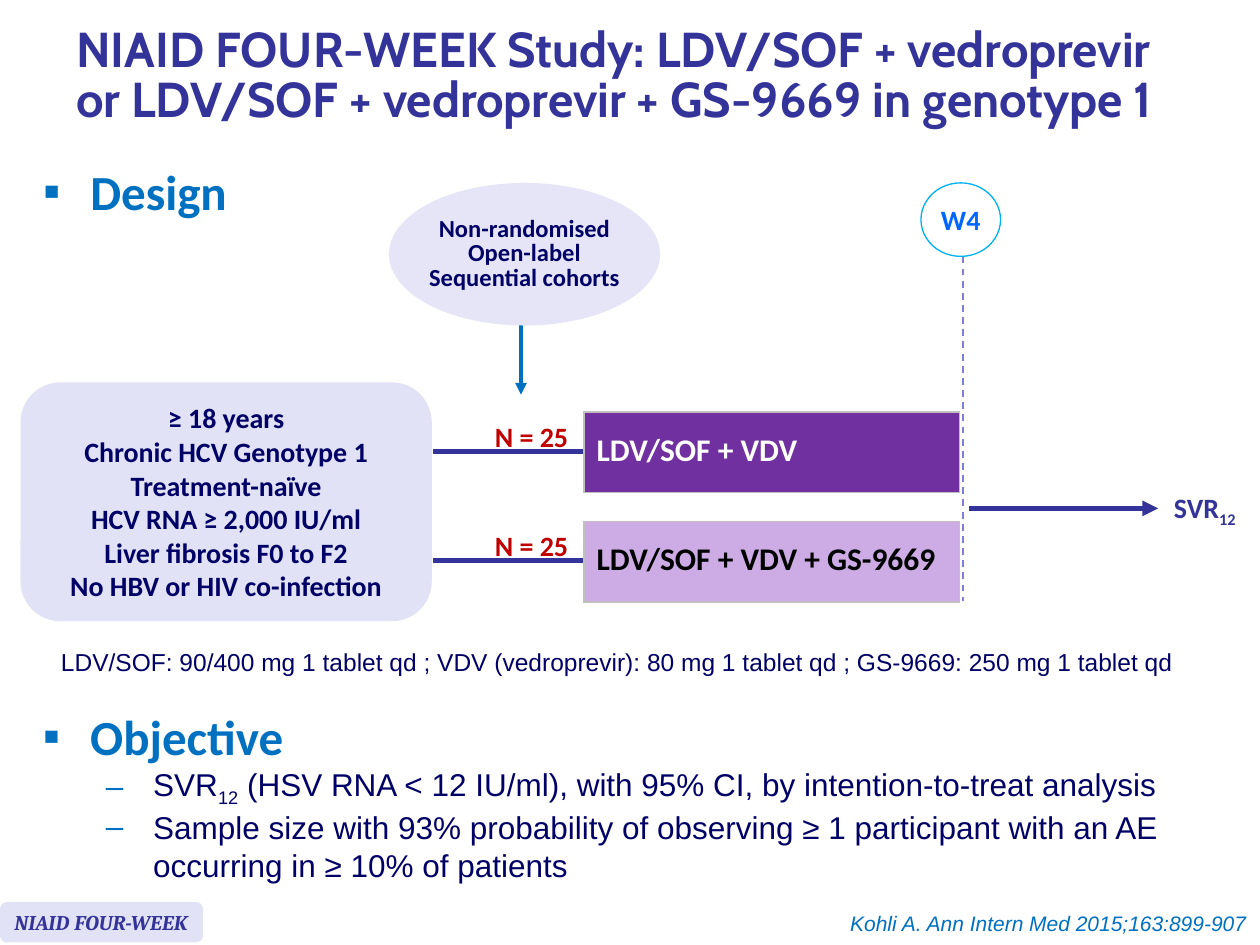
from pptx import Presentation
from pptx.dml.color import RGBColor
from pptx.enum.dml import MSO_LINE
from pptx.enum.shapes import MSO_CONNECTOR, MSO_SHAPE
from pptx.enum.text import MSO_ANCHOR, PP_ALIGN
from pptx.oxml.ns import qn
from pptx.util import Pt
from lxml import etree

LEFT, CENTER, RIGHT = PP_ALIGN.LEFT, PP_ALIGN.CENTER, PP_ALIGN.RIGHT
TOP, MIDDLE = MSO_ANCHOR.TOP, MSO_ANCHOR.MIDDLE
ELLIPSE, ROUNDED = MSO_SHAPE.OVAL, MSO_SHAPE.ROUNDED_RECTANGLE
STRAIGHT, DASH = MSO_CONNECTOR.STRAIGHT, MSO_LINE.DASH

INDIGO = RGBColor(0x33, 0x33, 0x99)
NAVY = RGBColor(0x00, 0x00, 0x66)
BLUE = RGBColor(0x00, 0x70, 0xC0)
BRIGHT_BLUE = RGBColor(0x00, 0x66, 0xFF)
CYAN = RGBColor(0x00, 0xB0, 0xF0)
RED = RGBColor(0xC0, 0x00, 0x00)
PURPLE = RGBColor(0x70, 0x30, 0xA0)
LILAC = RGBColor(0xCD, 0xAC, 0xE6)
PALE = RGBColor(0xE2, 0xE2, 0xF6)
PALE_OVAL = RGBColor(0xE5, 0xE5, 0xF7)
DASH_BLUE = RGBColor(0x7E, 0x7E, 0xD4)
GREY = RGBColor(0xC0, 0xC0, 0xC0)
WHITE = RGBColor(0xFF, 0xFF, 0xFF)
BLACK = RGBColor(0x00, 0x00, 0x00)


def add_run(p, text, size, color, font="Calibri", bold=True, italic=False, sub=False):
    r = p.add_run()
    r.text = text
    f = r.font
    f.name, f.size, f.bold, f.italic = font, Pt(size), bold, italic
    f.color.rgb = color
    if sub:
        r._r.get_or_add_rPr().set("baseline", "-25000")


def write_lines(tf, lines, size, color, align=LEFT, anchor=TOP, wrap=False,
                spacing=None, **style):
    tf.word_wrap, tf.vertical_anchor = wrap, anchor
    for i, line in enumerate(lines):
        p = tf.add_paragraph() if i else tf.paragraphs[0]
        p.alignment = align
        if spacing:
            p.line_spacing = spacing
        for j, part in enumerate(line.split("\n")):
            if j:
                p.add_line_break()
            add_run(p, part, size, color, **style)


def add_text(s, x, y, w, h, lines, size, color, **style):
    tf = s.shapes.add_textbox(Pt(x), Pt(y), Pt(w), Pt(h)).text_frame
    write_lines(tf, lines, size, color, **style)
    return tf


def add_panel(s, kind, x, y, w, h, fill, lines, size, color, outline=None, **style):
    sp = s.shapes.add_shape(kind, Pt(x), Pt(y), Pt(w), Pt(h))
    sp.shadow.inherit = False
    sp.fill.solid()
    sp.fill.fore_color.rgb = fill
    if outline:
        sp.line.color.rgb, sp.line.width = outline, Pt(0.75)
    else:
        sp.line.fill.background()
    write_lines(sp.text_frame, lines, size, color, anchor=MIDDLE, **style)


def add_line(s, x1, y1, x2, y2, color, width, arrow=False, dash=None):
    line = s.shapes.add_connector(STRAIGHT, Pt(x1), Pt(y1), Pt(x2), Pt(y2))
    line.line.color.rgb, line.line.width = color, Pt(width)
    if dash:
        line.line.dash_style = dash
    if arrow:
        etree.SubElement(line.line._get_or_add_ln(), qn("a:tailEnd"), type="triangle")
    etree.SubElement(line._element.spPr, qn("a:effectLst"))


def add_arm(s, x, y, text, fill, color):
    """One treatment arm: connecting line, patient count and treatment cell."""
    w, h = 214.5, 46
    add_line(s, x - 86.5, y + h / 2 - 0.5, x, y + h / 2 - 0.5, INDIGO, 3)
    add_text(s, x - 58.5, y + 0.5, 57, 26.5, ["N = 25"], 16, RED, align=CENTER)
    table = s.shapes.add_table(1, 1, Pt(x), Pt(y), Pt(w), Pt(h)).table
    table.first_row = table.horz_banding = False
    cell = table.cell(0, 0)
    write_lines(cell.text_frame, [text], 18, color, wrap=True, spacing=0.8)
    cell.vertical_anchor = MIDDLE
    tc_pr = cell._tc.get_or_add_tcPr()
    for side in ("lnL", "lnR", "lnT", "lnB"):
        ln = etree.SubElement(tc_pr, qn(f"a:{side}"), w=str(Pt(1)))
        solid = etree.SubElement(ln, qn("a:solidFill"))
        etree.SubElement(solid, qn("a:srgbClr"), val=str(GREY))
    cell.fill.solid()
    cell.fill.fore_color.rgb = fill


def add_bullet(p, char, indent):
    p_pr = p._p.get_or_add_pPr()
    p_pr.set("marL", str(Pt(indent)))
    p_pr.set("indent", str(Pt(-27)))
    color = etree.SubElement(p_pr, qn("a:buClr"))
    etree.SubElement(color, qn("a:srgbClr"), val=str(BLUE))
    etree.SubElement(p_pr, qn("a:buFont"), typeface="Arial")
    etree.SubElement(p_pr, qn("a:buChar"), char=char)


def add_section(s, x, y, w, h, heading, points=()):
    """Bulleted heading with dashed points; odd pieces of a point are subscripts."""
    tf = add_text(s, x, y, w, h, [heading], 28, BLUE, wrap=True)
    add_bullet(tf.paragraphs[0], "▪", 27)
    for pieces in points:
        p = tf.add_paragraph()
        p.level = 1
        add_bullet(p, "–", 63)
        for i, piece in enumerate(pieces):
            add_run(p, piece, 18, NAVY, "Arial", bold=False, sub=i % 2 == 1)


def add_title(s, x, y, w, h):
    add_text(s, x, y, w, h,
             ["NIAID FOUR-WEEK Study: LDV/SOF + vedroprevir\n"
              "or LDV/SOF + vedroprevir + GS-9669 in genotype 1"],
             28, INDIGO, font="Cabin", anchor=MIDDLE, wrap=True, spacing=0.85)


def add_design(s, x, y):
    """Study flow from patients through the two arms to the end point."""
    # Study type
    add_line(s, x + 286, y + 81.5, x + 286, y + 121, BLUE, 2.25, arrow=True)
    add_panel(s, ELLIPSE, x + 210.5, y, 155, 81.5, PALE_OVAL,
              ["Non-randomised", "Open-label", "Sequential cohorts"], 14, NAVY,
              align=CENTER, spacing=Pt(14))
    # Patients
    add_panel(s, ROUNDED, x, y + 114, 235, 136.5, PALE,
              ["≥ 18 years", "Chronic HCV Genotype 1", "Treatment-naïve",
               "HCV RNA ≥ 2,000 IU/ml", "Liver fibrosis F0 to F2",
               "No HBV or HIV co-infection"], 16, NAVY, align=CENTER, wrap=True)
    # Arms
    arms = [("LDV/SOF + VDV", PURPLE, WHITE), ("LDV/SOF + VDV + GS-9669", LILAC, BLACK)]
    for i, arm in enumerate(arms):
        add_arm(s, x + 322, y + 131 + i * 62.5, *arm)
    # Week 4 marker
    add_line(s, x + 538.5, y + 42, x + 538.5, y + 239, DASH_BLUE, 1, dash=DASH)
    add_panel(s, ELLIPSE, x + 514.5, y, 45.5, 42, WHITE, ["W4"], 16, BRIGHT_BLUE,
              outline=CYAN, align=CENTER)
    # End point
    add_line(s, x + 542, y + 186, x + 650, y + 186, INDIGO, 3, arrow=True)
    tf = add_text(s, x + 652, y + 172, 52, 26.5, ["SVR"], 16, INDIGO)
    add_run(tf.paragraphs[0], "12", 16, INDIGO, sub=True)
    # Doses
    add_text(s, x + 16, y + 261.5, 667, 24.5,
             ["LDV/SOF: 90/400 mg 1 tablet qd ; VDV (vedroprevir): 80 mg 1 tablet qd ; "
              "GS-9669: 250 mg 1 tablet qd"], 14, NAVY, font="Arial", bold=False)


def add_footer(s, x, y, w):
    add_panel(s, ROUNDED, x, y, 116, 23, PALE, ["NIAID FOUR-WEEK"], 12, INDIGO,
              font="Cambria", italic=True)
    add_text(s, x + w - 243, y + 1.5, 242.5, 21.5,
             ["Kohli A. Ann Intern Med 2015;163:899-907"], 12, BLUE,
             font="Arial", bold=False, italic=True, align=RIGHT)


def main():
    prs = Presentation()
    prs.slide_width, prs.slide_height = Pt(720), Pt(540)
    s = prs.slides.add_slide(prs.slide_layouts[6])
    add_title(s, 36.5, 6, 683.5, 77)
    add_section(s, 17.5, 88.5, 142.5, 45.5, "Design")
    add_design(s, 11.75, 104.5)
    add_section(s, 17.5, 400, 681, 93, "Objective", [
        ["SVR", "12", " (HSV RNA < 12 IU/ml), with 95% CI, by intention-to-treat analysis"],
        ["Sample size with 93% probability of observing ≥ 1 participant with an AE "
         "occurring in ≥ 10% of patients"],
    ])
    add_footer(s, 0, 515.5, 720)
    prs.save("out.pptx")


if __name__ == "__main__":
    main()
